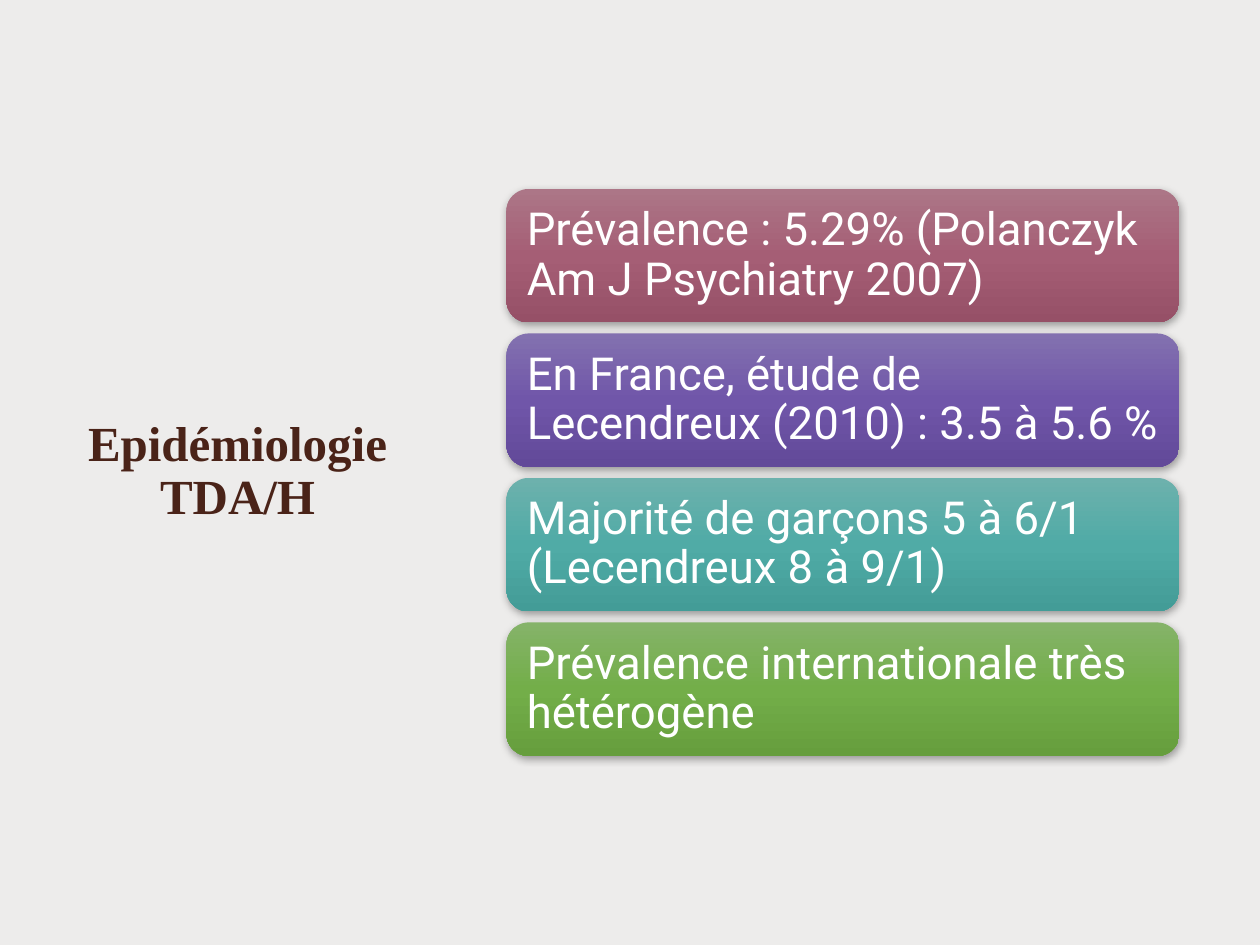
from lxml import etree
from pptx import Presentation
from pptx.dml.color import RGBColor
from pptx.enum import shapes, text
from pptx.oxml.ns import qn
from pptx.util import Inches, Pt

TITLE = "Epidémiologie TDA/H"
BACKGROUND, BROWN, WHITE = "EDECEB", "4A2318", "FFFFFF"

# Wording, then gradient colours from top to bottom
FACTS = [
    ("Prévalence : 5.29% (Polanczyk Am J Psychiatry 2007)", ("AC7687", "A55E75", "965067")),
    ("En France, étude de Lecendreux (2010) : 3.5 à 5.6 %", ("8371AF", "7056A9", "624999")),
    ("Majorité de garçons 5 à 6/1 (Lecendreux 8 à 9/1)", ("6DB1AD", "50ABA6", "439C97")),
    ("Prévalence internationale très hétérogène", ("85B369", "73AE49", "669E3D")),
]

CARD_LEFT, CARD_WIDTH, CARD_HEIGHT = 4.02, 5.34, 1.06
STACK_TOP, STACK_BOTTOM = 1.5, 6.0
CARD_PITCH = (STACK_BOTTOM - STACK_TOP - CARD_HEIGHT) / (len(FACTS) - 1)


def rgb(color):
    return RGBColor.from_string(color)


def write(shape, words, *, font, size, color, bold=False,
          align=text.PP_ALIGN.LEFT, spacing=0.9, inset=0.1):
    frame = shape.text_frame
    frame.word_wrap = True
    frame.vertical_anchor = text.MSO_ANCHOR.MIDDLE
    frame.margin_left = frame.margin_right = Inches(inset)
    frame.margin_top = frame.margin_bottom = Inches(inset)
    paragraph = frame.paragraphs[0]
    paragraph.alignment = align
    paragraph.line_spacing = spacing
    run = paragraph.add_run()
    run.text = words
    run.font.name = font
    run.font.size = Pt(size)
    run.font.bold = bold
    run.font.color.rgb = rgb(color)


def add_color(parent, color):
    return etree.SubElement(parent, qn("a:srgbClr"), val=color)


def fill_downwards(shape, colors):
    """Fill with evenly spaced gradient stops, top to bottom."""
    shape.fill.gradient()
    shape.fill.gradient_angle = 270
    stops = shape._element.spPr.find(qn("a:gradFill")).find(qn("a:gsLst"))
    stops.clear()
    for i, color in enumerate(colors):
        position = 100000 * i // (len(colors) - 1)
        add_color(etree.SubElement(stops, qn("a:gs"), pos=str(position)), color)


def drop_shadow(shape):
    shape.shadow.inherit = False
    effects = shape._element.spPr.find(qn("a:effectLst"))
    shadow = etree.SubElement(effects, qn("a:outerShdw"), blurRad=str(Pt(4.5)),
                              dist=str(Pt(1.5)), dir="5400000", rotWithShape="0")
    etree.SubElement(add_color(shadow, "000000"), qn("a:alpha"), val="35000")


def add_card(slide, top, words, colors):
    card = slide.shapes.add_shape(
        shapes.MSO_SHAPE.ROUNDED_RECTANGLE, Inches(CARD_LEFT), Inches(top),
        Inches(CARD_WIDTH), Inches(CARD_HEIGHT))
    fill_downwards(card, colors)
    card.line.fill.background()
    drop_shadow(card)
    write(card, words, font="Roboto", size=26, color=WHITE, inset=0.11)


def main():
    deck = Presentation()
    deck.slide_width, deck.slide_height = Inches(10), Inches(7.5)
    slide = deck.slides.add_slide(deck.slide_layouts[6])
    slide.background.fill.solid()
    slide.background.fill.fore_color.rgb = rgb(BACKGROUND)

    title = slide.shapes.add_textbox(Inches(0.53), Inches(0.7), Inches(2.71), Inches(6.1))
    write(title, TITLE, font="Times New Roman", size=28, color=BROWN, bold=True,
          align=text.PP_ALIGN.CENTER, spacing=0.89)

    for row, (words, colors) in enumerate(FACTS):
        add_card(slide, STACK_TOP + row * CARD_PITCH, words, colors)

    deck.save("out.pptx")


if __name__ == "__main__":
    main()
